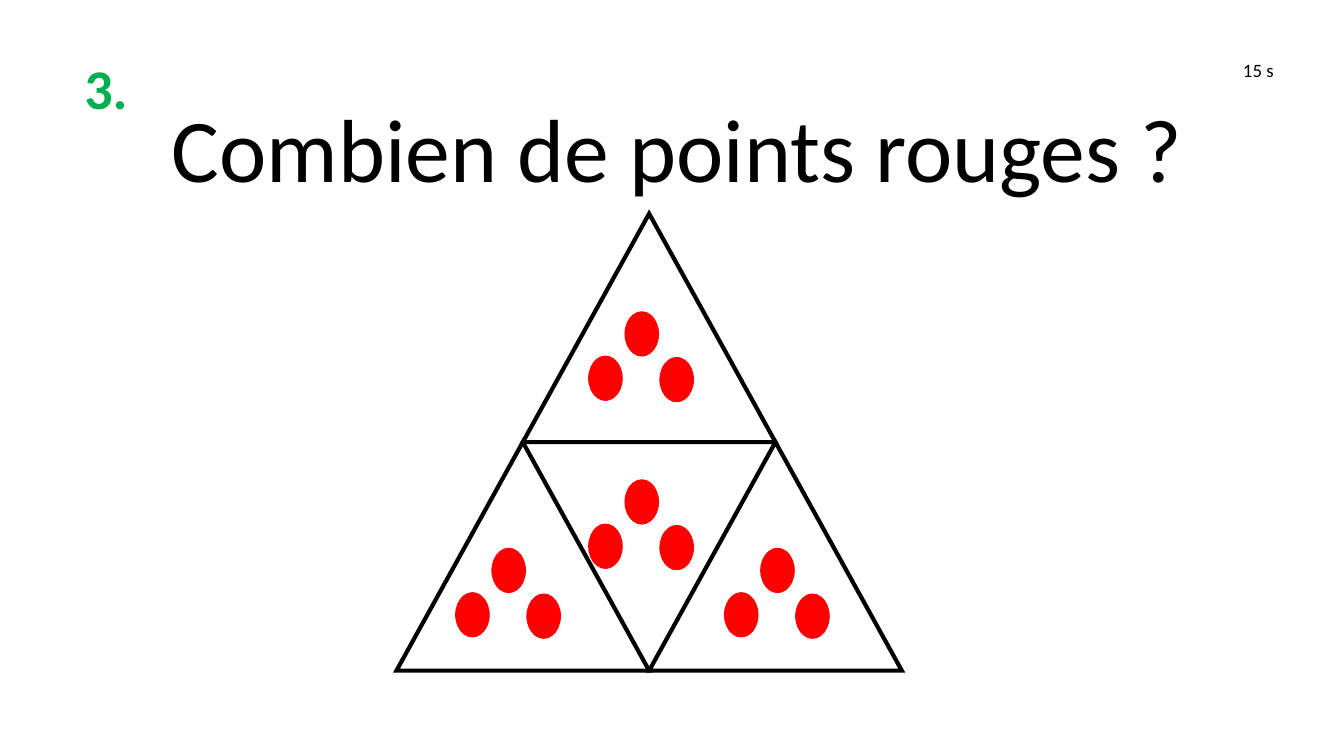
from lxml.etree import SubElement
from pptx import Presentation
from pptx.dml.color import RGBColor
from pptx.enum.shapes import MSO_SHAPE as Shape
from pptx.enum.text import MSO_AUTO_SIZE as AutoSize
from pptx.oxml.ns import qn
from pptx.util import Inches, Pt

BLACK, GREEN, RED = "000000", "00B050", "FF0000"

# Content: text, box (left, top, width, height), size, colour, bold, wrap
TEXTS = [
    ("3.", (0.53, 0.35, 0.53, 0.61), 30, GREEN, True, False),
    ("15 s", (9.15, 0.39, 0.58, 0.27), 10.1, BLACK, False, True),
    ("Combien de points rouges ?", (1.18, 0.64, 7.97, 0.91), 48, BLACK, False, True),
]

# Large triangle: three outlined triangles around an empty middle one
LEFT, TOP = 2.95, 1.59
SIDE, HEIGHT = 1.88, 1.7
TRIANGLES = [(0.5, 0), (0, 1), (1, 1)]  # in sides and heights

# Each cluster is placed by the top left of its three dots
DOT_W, DOT_H = 0.25, 0.33
DOTS = [(0, 0.33), (0.53, 0.34), (0.27, 0)]
CLUSTERS = [(3.39, 4.08), (4.38, 2.32), (4.38, 3.57), (5.39, 4.08)]


def rgb(colour):
    return RGBColor.from_string(colour)


def add_text(slide, text, box, size, colour, bold, wrap):
    frame = slide.shapes.add_textbox(*map(Inches, box)).text_frame
    frame.text = text
    frame.word_wrap = wrap
    frame.auto_size = AutoSize.SHAPE_TO_FIT_TEXT
    font = frame.paragraphs[0].runs[0].font
    font.name, font.size, font.bold = "Calibri", Pt(size), bold
    font.color.rgb = rgb(colour)


def add_figure(shapes, kind, box, line, width, fill=None):
    figure = shapes.add_shape(kind, *map(Inches, box))
    figure.shadow.inherit = False
    figure.line.color.rgb = rgb(line)
    figure.line.width = Pt(width)
    # Sharp corners
    outline = figure.element.spPr.find(qn("a:ln"))
    SubElement(outline, qn("a:miter"), lim="800000")
    if fill:
        figure.fill.solid()
        figure.fill.fore_color.rgb = rgb(fill)
    else:
        figure.fill.background()


prs = Presentation()
prs.slide_width = Inches(10)
prs.slide_height = prs.slide_width * 9 // 16
slide = prs.slides.add_slide(prs.slide_layouts[6])

# Triangles
pyramid = slide.shapes.add_group_shape().shapes
for column, row in TRIANGLES:
    box = (LEFT + column * SIDE, TOP + row * HEIGHT, SIDE, HEIGHT)
    add_figure(pyramid, Shape.ISOSCELES_TRIANGLE, box, BLACK, 2.25)

# Red dots
for left, top in CLUSTERS:
    cluster = slide.shapes.add_group_shape().shapes
    for dx, dy in DOTS:
        box = (left + dx, top + dy, DOT_W, DOT_H)
        add_figure(cluster, Shape.OVAL, box, RED, 0.5, RED)

# Number, time and question
for text in TEXTS:
    add_text(slide, *text)

prs.save("out.pptx")
